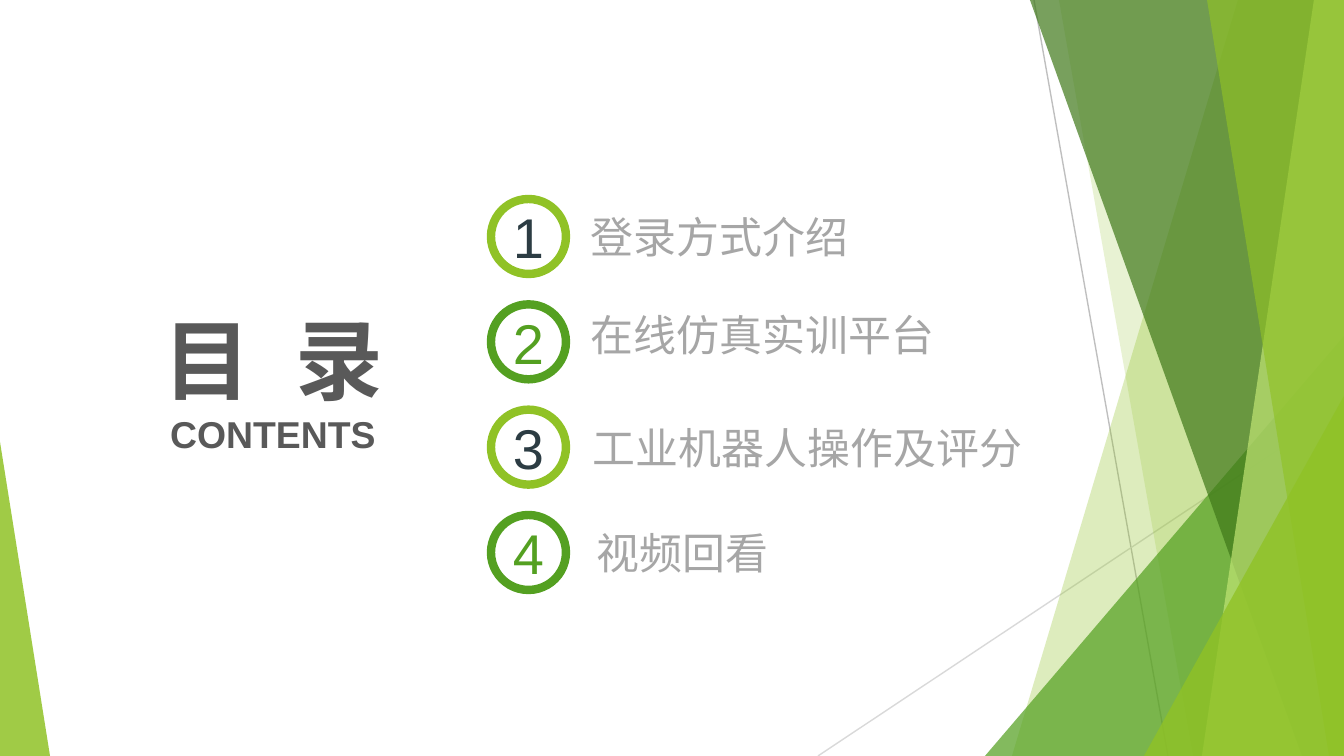
from lxml.etree import SubElement
from pptx import Presentation
from pptx.dml.color import RGBColor
from pptx.enum.shapes import MSO_CONNECTOR, MSO_SHAPE
from pptx.enum.text import MSO_ANCHOR, MSO_AUTO_SIZE, PP_ALIGN
from pptx.oxml.ns import qn
from pptx.util import Pt

PX = 914400 / 134.4
SLIDE_W, SLIDE_H = 1344, 756

WHITE = RGBColor(0xFF, 0xFF, 0xFF)
LIME = RGBColor(0x90, 0xC2, 0x26)
PALE_LIME = RGBColor(0xC0, 0xE4, 0x74)
GREEN = RGBColor(0x54, 0xA0, 0x21)
DARK_GREEN = RGBColor(0x3F, 0x78, 0x19)
INK = RGBColor(0x2C, 0x3C, 0x43)
TITLE_GRAY = RGBColor(0x59, 0x59, 0x59)
LABEL_GRAY = RGBColor(0xA6, 0xA6, 0xA6)
LINE_GRAY = RGBColor(0xBF, 0xBF, 0xBF)
LIGHT_GRAY = RGBColor(0xD9, 0xD9, 0xD9)

NUMBER = {"size": Pt(30), "bold": False}
LABEL = {"size": Pt(23), "bold": False}
TITLE = {"size": Pt(47), "bold": True}
SUBTITLE = {"size": Pt(20), "bold": True}


def px(*lengths):
    return [round(n * PX) for n in lengths]


def set_fill(shape, color, alpha=100):
    shape.shadow.inherit = False
    shape.fill.solid()
    shape.fill.fore_color.rgb = color
    if alpha < 100:
        rgb = shape.fill._xPr.find(qn("a:solidFill"))[0]
        SubElement(rgb, qn("a:alpha"), val=str(alpha * 1000))


def write(shape, text, style, color, align=PP_ALIGN.CENTER, anchor=MSO_ANCHOR.MIDDLE):
    tf = shape.text_frame
    frame = {"margin_left": 0, "margin_right": 0, "margin_top": 0, "margin_bottom": 0,
             "word_wrap": True, "auto_size": MSO_AUTO_SIZE.NONE, "vertical_anchor": anchor}
    for name, value in frame.items():
        setattr(tf, name, value)
    p = tf.paragraphs[0]
    p.alignment = align
    r = p.add_run()
    r.text = text
    for name, value in {**style, "name": "Arial"}.items():
        setattr(r.font, name, value)
    r.font.color.rgb = color
    return r


def add_line(s, start, end, color):
    line = s.shapes.add_connector(MSO_CONNECTOR.STRAIGHT, *px(*start, *end))
    line.line.color.rgb = color
    line.line.width = Pt(0.75)
    SubElement(line._element.spPr, qn("a:effectLst"))


def add_band(s, box, top_x, bottom_x, color, alpha):
    """Fill from a slanted left edge to the right side of the box."""
    x, y, w, h = box
    builder = s.shapes.build_freeform(x + top_x, y, scale=PX)
    builder.add_line_segments([(x + w, y), (x + w, y + h), (x + bottom_x, y + h)])
    sp = builder.convert_to_shape()
    set_fill(sp, color, alpha)
    sp.line.fill.background()


def add_triangle(s, box, apex, color, alpha):
    sp = s.shapes.add_shape(MSO_SHAPE.ISOSCELES_TRIANGLE, *px(*box))
    sp.adjustments[0] = apex
    set_fill(sp, color, alpha)
    sp.line.fill.background()


def add_facets(s, box):
    x, y, w, h = box
    right, bottom = x + w, y + h
    add_line(s, (x + 216, y), (x + 350, bottom), LINE_GRAY)
    add_line(s, (right, y + 406), (x, bottom), LIGHT_GRAY)
    add_band(s, box, 420, 194, LIME, 30)
    add_band(s, box, 241, 375, LIME, 20)
    add_triangle(s, (right - 359, bottom - 420, 359, 420), 1, GREEN, 72)
    add_band(s, box, 212, 484, DARK_GREEN, 70)
    add_band(s, box, 496, 384, PALE_LIME, 70)
    add_band(s, box, 389, 511, LIME, 65)
    add_triangle(s, (right - 200, bottom - 360, 200, 360), 1, LIME, 80)


def add_heading(s, box):
    x, y, w, h = box
    title = s.shapes.title
    title.left, title.top, title.width, title.height = px(x, y, w, 106)
    write(title, "目", TITLE, TITLE_GRAY)
    gap = write(title, " ", TITLE, TITLE_GRAY)
    gap.font._element.set("spc", "1300")  # widens the single space
    write(title, "录", TITLE, TITLE_GRAY)
    subtitle = s.shapes.add_textbox(*px(x, y + 106, w, h - 106))
    write(subtitle, "CONTENTS", SUBTITLE, TITLE_GRAY, anchor=MSO_ANCHOR.TOP)


def add_agenda(s, box, items):
    x, y, w, h = box
    size = 75
    pitch = (h - size) / (len(items) - 1)
    for i, (text, label_x, label_y) in enumerate(items):
        ring, ink = [(LIME, INK), (GREEN, GREEN)][i % 2]
        circle = s.shapes.add_shape(MSO_SHAPE.OVAL, *px(x, y + i * pitch, size, size))
        set_fill(circle, WHITE)
        circle.line.color.rgb = ring
        circle.line.width = Pt(4.5)
        write(circle, str(i + 1), NUMBER, ink)
        label = s.shapes.add_textbox(*px(x + label_x, y + label_y, w - label_x, 52))
        write(label, text, LABEL, LABEL_GRAY, PP_ALIGN.LEFT)


prs = Presentation()
prs.slide_width, prs.slide_height = px(SLIDE_W, SLIDE_H)
s = prs.slides.add_slide(prs.slide_layouts[5])

# Background facets
add_facets(s, (818, 0, SLIDE_W - 818, SLIDE_H))
add_triangle(s, (0, 442, 50, 314), 0, LIME, 85)

# Heading and numbered contents; each item has its label offset
add_heading(s, (123, 305, 300, 152))
add_agenda(s, (491, 199, 620, 391), [
    ("登录方式介绍", 100, 11),
    ("在线仿真实训平台", 100, 109),
    ("工业机器人操作及评分", 102, 222),
    ("视频回看", 106, 327),
])

prs.save("out.pptx")
